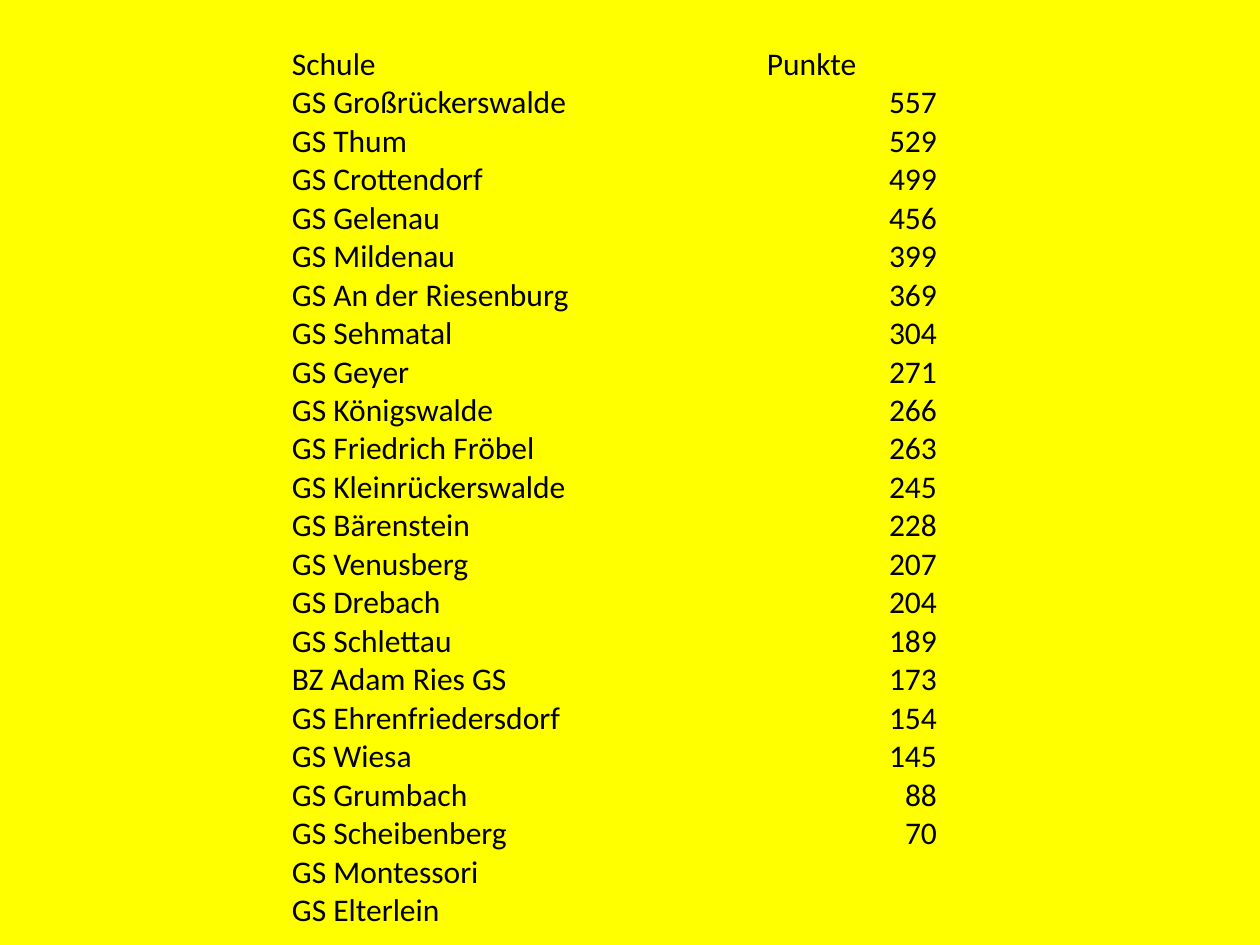
from pptx import Presentation
from pptx import util as u
from pptx.dml.color import RGBColor
from pptx.enum import text

PX = 914400 // 126
HUES = {"back": "FFFF00", "ink": "000000"}
PLAIN = "{2D5ABB26-0587-4C30-8999-92F81FD0307C}"
ROWS = [
    ("Schule", "Punkte"),
    ("GS Großrückerswalde", "557"),
    ("GS Thum", "529"),
    ("GS Crottendorf", "499"),
    ("GS Gelenau", "456"),
    ("GS Mildenau", "399"),
    ("GS An der Riesenburg", "369"),
    ("GS Sehmatal", "304"),
    ("GS Geyer", "271"),
    ("GS Königswalde", "266"),
    ("GS Friedrich Fröbel", "263"),
    ("GS Kleinrückerswalde", "245"),
    ("GS Bärenstein", "228"),
    ("GS Venusberg", "207"),
    ("GS Drebach", "204"),
    ("GS Schlettau", "189"),
    ("BZ Adam Ries GS", "173"),
    ("GS Ehrenfriedersdorf", "154"),
    ("GS Wiesa", "145"),
    ("GS Grumbach", "88"),
    ("GS Scheibenberg", "70"),
    ("GS Montessori", ""),
    ("GS Elterlein", ""),
]

deck = Presentation()
deck.slide_width, deck.slide_height = u.Inches(10), u.Inches(7.5)
slide = deck.slides.add_slide(deck.slide_layouts[6])
back = slide.background.fill
back.solid()
back.fore_color.rgb = RGBColor.from_string(HUES["back"])

frame = slide.shapes.add_table(
    len(ROWS), 2, 292 * PX, 45 * PX, 645 * PX, 883 * PX)
table = frame.table
table.first_row = table.horz_banding = False
table._tbl.tblPr[0].text = PLAIN
for col, wide in zip(table.columns, (475, 170)):
    col.width = wide * PX

for r, row in enumerate(ROWS):
    table.rows[r].height = 38 * PX
    for c, word in enumerate(row):
        cell = table.cell(r, c)
        cell.fill.background()
        cell.margin_left = cell.margin_right = 0
        cell.margin_top = cell.margin_bottom = 0
        cell.vertical_anchor = text.MSO_ANCHOR.BOTTOM
        if not word:
            continue
        para = cell.text_frame.paragraphs[0]
        para.text = word
        if r and c:
            para.alignment = text.PP_ALIGN.RIGHT
        font = para.runs[0].font
        font.name, font.size = "Calibri", u.Pt(18)
        font.color.rgb = RGBColor.from_string(HUES["ink"])

deck.save("out.pptx")
